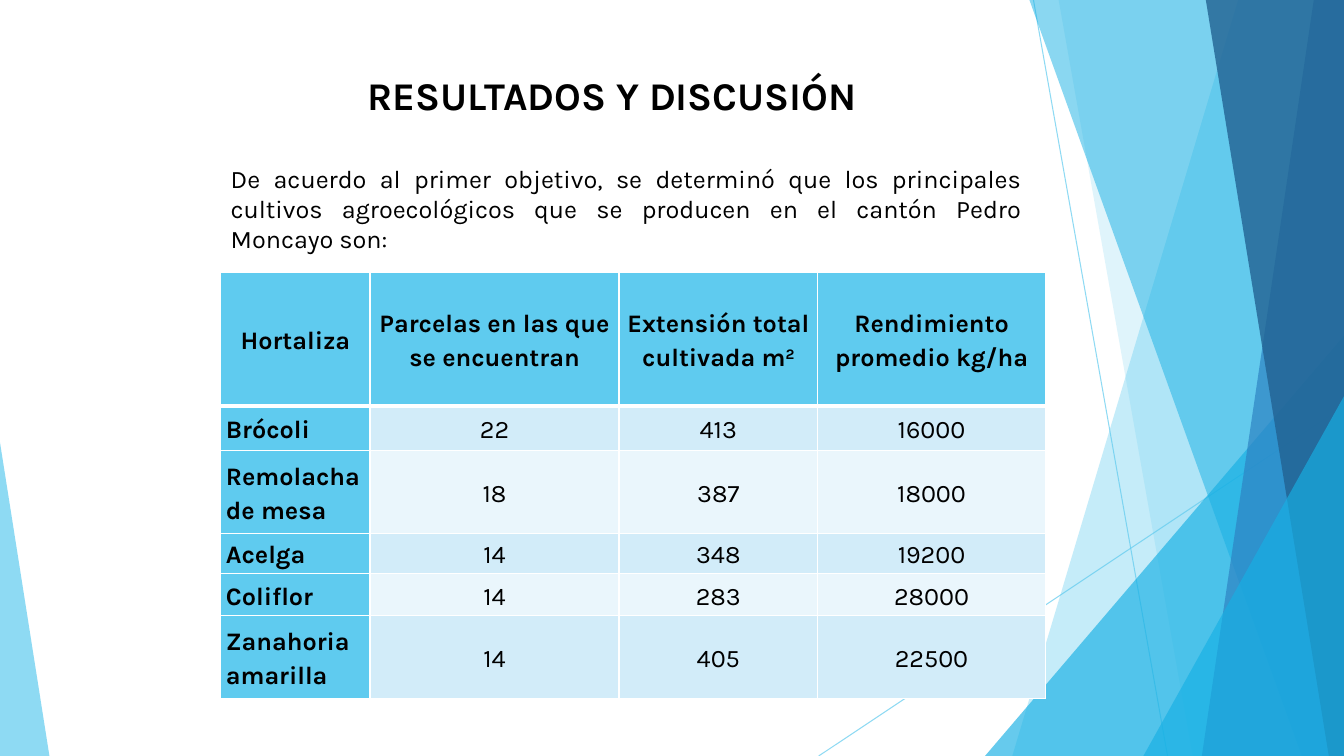
from dataclasses import dataclass

from lxml import etree
from pptx import Presentation
from pptx.dml.color import RGBColor
from pptx.enum.shapes import MSO_CONNECTOR as Connector, MSO_SHAPE as Shape
from pptx.enum.text import MSO_ANCHOR as Anchor, MSO_AUTO_SIZE as AutoSize, PP_ALIGN as Align
from pptx.oxml.ns import qn
from pptx.util import Inches, Pt


@dataclass(frozen=True)
class Theme:
    font: str = "Karla"
    title_size: int = 28
    text_size: int = 18
    text: str = "000000"
    border: str = "FFFFFF"
    sky: str = "5FCBEF"
    cyan: str = "17B0E4"
    blue: str = "2E83C3"
    navy: str = "226292"
    bands: tuple = ("D2ECF9", "EAF6FC")


THEME = Theme()
SLIDE_WIDTH, SLIDE_HEIGHT = 13.33, 7.5

# Facets on the right edge: top x, bottom x, colour, opacity in percent
BACK_FACETS = [
    (12.28, 10.04, THEME.sky, 36),
    (10.5, 11.83, THEME.sky, 20),
]
FRONT_FACETS = [
    (10.21, 12.91, THEME.cyan, 50),
    (13.03, 11.92, THEME.blue, 70),
    (11.96, 13.18, THEME.navy, 80),
]

COLUMN_WIDTHS = [1.48, 2.47, 1.97, 2.26]
ROW_HEIGHTS = [1.33, 0.44, 0.82, 0.4, 0.42, 0.82]
HEADERS = [
    "Hortaliza",
    "Parcelas en las que se encuentran",
    "Extensión total cultivada m",
    "Rendimiento promedio kg/ha",
]
AREA_COLUMN = 2
CROPS = [
    ("Brócoli", 22, 413, 16000),
    ("Remolacha de mesa", 18, 387, 18000),
    ("Acelga", 14, 348, 19200),
    ("Coliflor", 14, 283, 28000),
    ("Zanahoria amarilla", 14, 405, 22500),
]


def set_opacity(color_format, percent):
    color = color_format._xFill.find(qn("a:srgbClr"))
    etree.SubElement(color, qn("a:alpha")).set("val", str(percent * 1000))


def paint(shape, color, opacity):
    shape.shadow.inherit = False
    shape.fill.solid()
    shape.fill.fore_color.rgb = RGBColor.from_string(color)
    set_opacity(shape.fill.fore_color, opacity)
    shape.line.fill.background()


def add_facet(slide, top_x, bottom_x, color, opacity):
    """Fill from a slanted edge to the right side of the slide."""
    builder = slide.shapes.build_freeform(Inches(top_x), Inches(0))
    corners = [(SLIDE_WIDTH, 0), (SLIDE_WIDTH, SLIDE_HEIGHT), (bottom_x, SLIDE_HEIGHT)]
    builder.add_line_segments([(Inches(x), Inches(y)) for x, y in corners])
    paint(builder.convert_to_shape(), color, opacity)


def add_triangle(slide, left, top, width, apex, color, opacity):
    """Stand a triangle on the bottom of the slide."""
    triangle = slide.shapes.add_shape(
        Shape.ISOSCELES_TRIANGLE, Inches(left), Inches(top),
        Inches(width), Inches(SLIDE_HEIGHT - top))
    triangle.adjustments[0] = apex
    paint(triangle, color, opacity)


def add_hairline(slide, start, end):
    points = [Inches(value) for value in (*start, *end)]
    line = slide.shapes.add_connector(Connector.STRAIGHT, *points)
    line.line.width = Pt(0.75)
    line.line.color.rgb = RGBColor.from_string(THEME.sky)
    set_opacity(line.line.fill.fore_color, 70)
    etree.SubElement(line._element.spPr, qn("a:effectLst"))


def add_backdrop(slide):
    add_hairline(slide, (10.25, 0), (11.58, SLIDE_HEIGHT))
    add_hairline(slide, (SLIDE_WIDTH, 4.03), (8.12, SLIDE_HEIGHT))
    for facet in BACK_FACETS:
        add_facet(slide, *facet)
    add_triangle(slide, 9.77, 3.33, 3.56, 1, THEME.cyan, 66)
    for facet in FRONT_FACETS:
        add_facet(slide, *facet)
    add_triangle(slide, 11.34, 3.93, 1.99, 1, THEME.cyan, 66)
    add_triangle(slide, 0, 4.39, 0.49, 0, THEME.sky, 70)


def add_run(paragraph, text, size=THEME.text_size, bold=False):
    run = paragraph.add_run()
    run.text = text
    run.font.name = THEME.font
    run.font.size = Pt(size)
    run.font.bold = bold
    run.font.color.rgb = RGBColor.from_string(THEME.text)
    return run


def add_title(slide, text):
    title = slide.shapes.title
    title.left, title.top = Inches(3.54), Inches(0.66)
    title.width, title.height = Inches(6.67), Inches(0.57)
    frame = title.text_frame
    frame.word_wrap = True
    frame.auto_size = AutoSize.NONE
    frame.vertical_anchor = Anchor.TOP
    paragraph = frame.paragraphs[0]
    paragraph.alignment = Align.LEFT
    add_run(paragraph, text, THEME.title_size, bold=True)


def add_intro(slide, text):
    box = slide.shapes.add_textbox(Inches(2.19), Inches(1.57), Inches(8.04), Inches(1.01))
    box.text_frame.word_wrap = True
    paragraph = box.text_frame.paragraphs[0]
    paragraph.alignment = Align.JUSTIFY
    add_run(paragraph, text)


def add_border(cell, side, width):
    line = etree.SubElement(cell._tc.get_or_add_tcPr(), qn(f"a:ln{side}"), w=str(Pt(width)))
    fill = etree.SubElement(line, qn("a:solidFill"))
    etree.SubElement(fill, qn("a:srgbClr"), val=THEME.border)


def format_cell(cell, row, column):
    cell.vertical_anchor = Anchor.MIDDLE
    cell.margin_left = cell.margin_right = Inches(0.05)
    cell.margin_top = cell.margin_bottom = 0
    # Borders come before the fill; the rule under the header is thicker
    widths = {"L": 1, "R": 1, "T": 3 if row == 1 else 1, "B": 3 if row == 0 else 1}
    for side, width in widths.items():
        add_border(cell, side, width)
    is_label = row == 0 or column == 0
    color = THEME.sky if is_label else THEME.bands[(row - 1) % 2]
    cell.fill.solid()
    cell.fill.fore_color.rgb = RGBColor.from_string(color)


def add_crop_table(slide):
    frame = slide.shapes.add_table(
        len(ROW_HEIGHTS), len(COLUMN_WIDTHS), Inches(2.19), Inches(2.7),
        Inches(sum(COLUMN_WIDTHS)), Inches(sum(ROW_HEIGHTS)))
    table = frame.table
    for column, width in zip(table.columns, COLUMN_WIDTHS):
        column.width = Inches(width)
    for row, height in zip(table.rows, ROW_HEIGHTS):
        row.height = Inches(height)
    for row, values in enumerate([HEADERS, *CROPS]):
        for column, value in enumerate(values):
            cell = table.cell(row, column)
            format_cell(cell, row, column)
            paragraph = cell.text_frame.paragraphs[0]
            paragraph.line_spacing = 1.15
            paragraph.alignment = Align.LEFT if row and column == 0 else Align.CENTER
            add_run(paragraph, str(value), bold=row == 0 or column == 0)
    # Square metres
    unit = table.cell(0, AREA_COLUMN).text_frame.paragraphs[0]
    exponent = add_run(unit, "2", bold=True)
    exponent._r.get_or_add_rPr().set("baseline", "30000")


def main():
    presentation = Presentation()
    presentation.slide_width = Inches(SLIDE_WIDTH)
    presentation.slide_height = Inches(SLIDE_HEIGHT)
    title_only = presentation.slide_layouts[5]
    slide = presentation.slides.add_slide(title_only)
    add_backdrop(slide)
    add_title(slide, "RESULTADOS Y DISCUSIÓN")
    add_intro(slide, "De acuerdo al primer objetivo, se determinó que los principales "
                     "cultivos agroecológicos que se producen en el cantón Pedro Moncayo son:")
    add_crop_table(slide)
    presentation.save("out.pptx")


if __name__ == "__main__":
    main()
